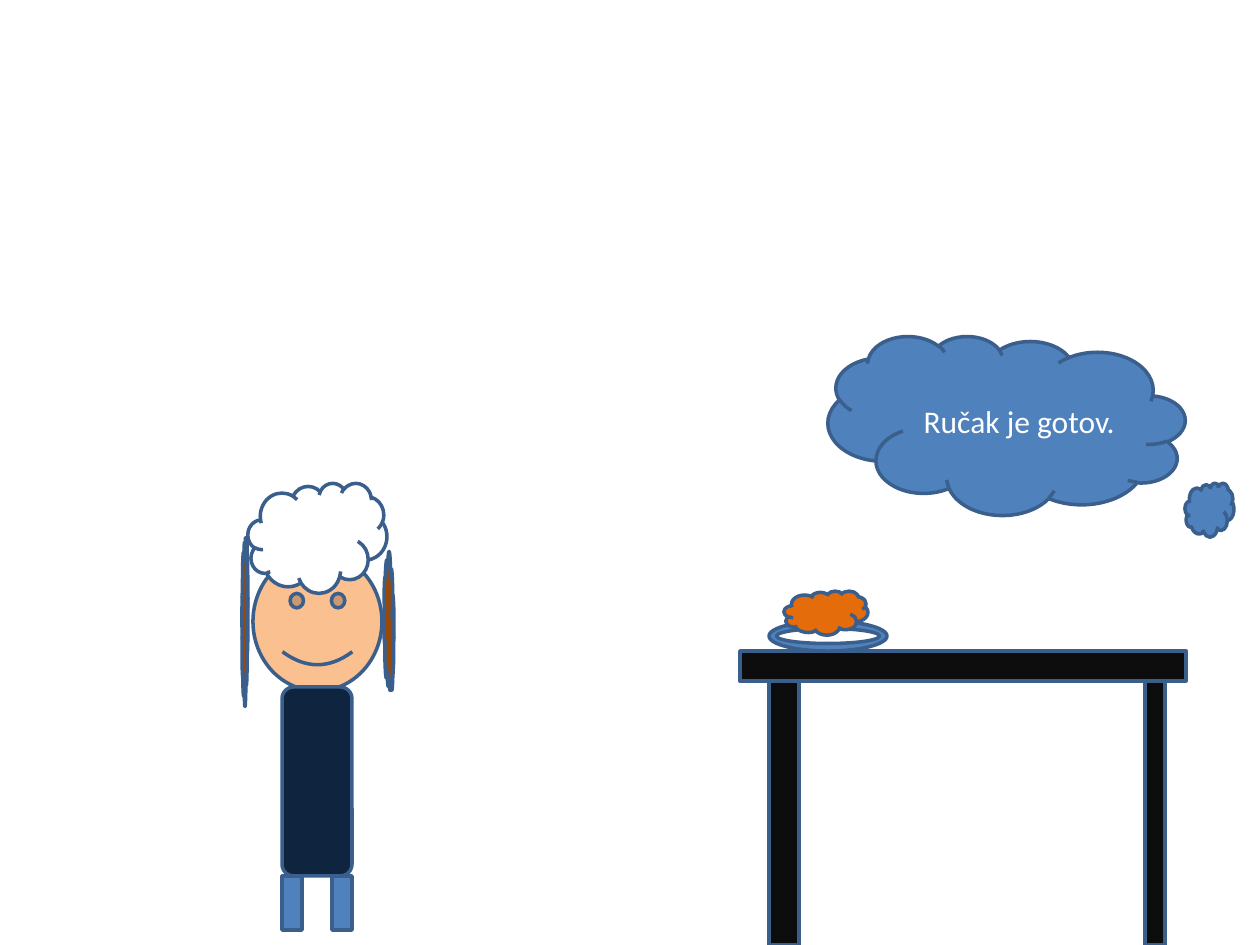
from pptx import Presentation
from pptx import util as u
from pptx.dml.color import RGBColor
from pptx.enum import shapes, text

PX = u.Inches(1) / 126
KIND = shapes.MSO_SHAPE
COLORS = {
    "outline": "3A5F8C",
    "blue": "4F81BD",
    "black": "0D0D0D",
    "food": "E46C0A",
    "skin": "FAC090",
    "white": "FFFFFF",
    "brown": "984807",
    "navy": "0F243E",
}


def px(n):
    """Turn pixels into EMU."""
    return u.Emu(round(n * PX))


def rgb(name):
    """Look up a named colour."""
    return RGBColor.from_string(COLORS[name])


def add_part(slide, box, kind, color, x, y, w, h, flip=None):
    """Add one outlined shape relative to the corner of a box."""
    left, top = box[:2]
    sp = slide.shapes.add_shape(kind, px(left + x), px(top + y), px(w), px(h))
    sp.shadow.inherit = False
    sp.fill.solid()
    sp.fill.fore_color.rgb = rgb(color)
    sp.line.color.rgb = rgb("outline")
    sp.line.width = u.Pt(2)
    if flip:
        sp.element.spPr.get_or_add_xfrm().set(flip, "1")
    return sp


def add_table_scene(slide, box):
    """Draw the dining table with a plate of food on it."""
    w, h = box[2:]
    top = 30
    add_part(slide, box, KIND.RECTANGLE, "black", 0, 0, w, top)
    for x, leg in ((29, 30), (405, 20)):
        add_part(slide, box, KIND.RECTANGLE, "black", x, top, leg, h - top)
    add_part(slide, box, KIND.DONUT, "blue", 29, -30, 118, 30)
    add_part(slide, box, KIND.CLOUD, "food", 44, -60, 84, 44)


def add_person(slide, box):
    """Draw the person from head to legs."""
    w, h = box[2:]
    add_part(slide, box, KIND.SMILEY_FACE, "skin", 11, 69, 129, 139)
    add_part(slide, box, KIND.CLOUD, "white", 6, 0, 139, 110)
    add_part(slide, box, KIND.CLOUD, "brown", w - 10, 69, 10, 139, "flipV")
    add_part(slide, box, KIND.CLOUD, "brown", 0, 54, 6, 169)
    add_part(slide, box, KIND.ROUNDED_RECTANGLE, "navy", 40, 204, 70, 189)
    for x in (40, 90):
        add_part(slide, box, KIND.RECTANGLE, "blue", x, 393, 20, h - 393)


def add_thought(slide, box, words):
    """Draw the thought cloud and its small trailing puff."""
    w, h = box[2:]
    add_part(slide, box, KIND.CLOUD, "blue", w, 147, 49, 54)
    sp = add_part(slide, box, KIND.CLOUD, "blue", 0, 0, w, h, "flipH")
    tf = sp.text_frame
    tf.word_wrap = True
    tf.vertical_anchor = text.MSO_ANCHOR.MIDDLE
    p = tf.paragraphs[0]
    p.text = words
    p.alignment = text.PP_ALIGN.CENTER
    p.font.name = "Calibri"
    p.font.size = u.Pt(18)
    p.font.color.rgb = rgb("white")


def main():
    """Build the slide and save it."""
    prs = Presentation()
    prs.slide_width, prs.slide_height = px(1260), px(945)
    slide = prs.slides.add_slide(prs.slide_layouts[6])
    add_table_scene(slide, (740, 651, 446, 294))
    add_person(slide, (242, 483, 152, 447))
    add_thought(slide, (828, 336, 357, 179), "Ručak je gotov.")
    prs.save("out.pptx")


if __name__ == "__main__":
    main()
